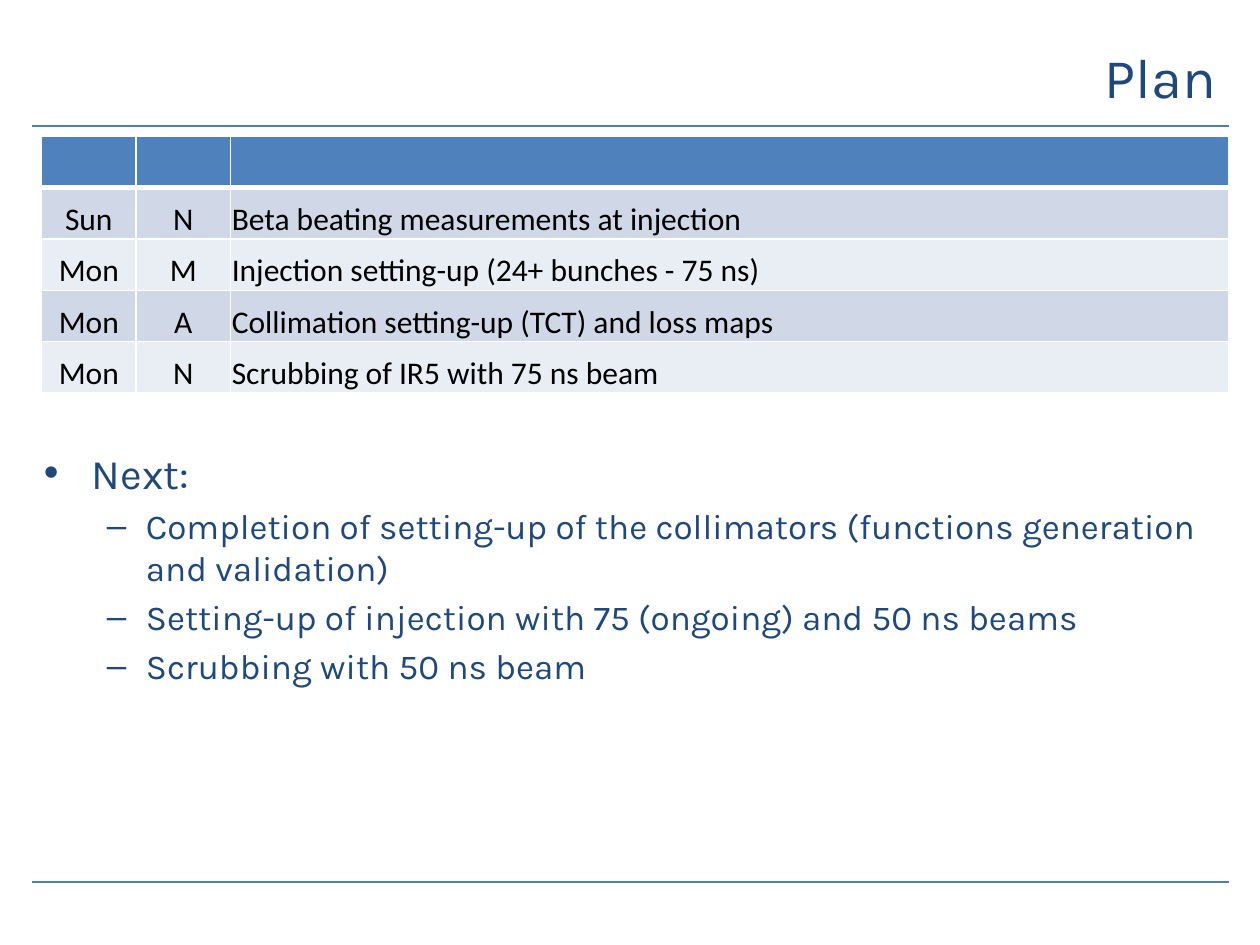
from lxml.etree import SubElement as Sub
from pptx import Presentation
from pptx.dml.color import RGBColor as Rgb
from pptx.enum.shapes import MSO_CONNECTOR as Conn
from pptx.enum.text import MSO_ANCHOR as Anchor, PP_ALIGN as Align
from pptx.oxml.ns import qn
from pptx.util import Inches, Pt

HUES = {
    "text": "1F497D", "rule": "4B7EBC", "head": "4F81BD", "edge": "FFFFFF",
    "odd": "D0D8E8", "even": "E9EDF4", "cell": "000000",
}
WIDTHS = [0.75, 0.75, 7.92]
ROWS = [
    ["", "", ""],
    ["Sun", "N", "Beta beating measurements at injection"],
    ["Mon", "M", "Injection setting-up (24+ bunches - 75 ns)"],
    ["Mon", "A", "Collimation setting-up (TCT) and loss maps"],
    ["Mon", "N", "Scrubbing of IR5 with 75 ns beam"],
]
# Bullet levels: mark, size, left margin, hanging indent
LEVELS = [("•", 24, 0.38, -0.38), ("–", 20, 0.81, -0.31)]
ITEMS = [
    (0, "Next:"),
    (1, "Completion of setting-up of the collimators "
        "(functions generation and validation)"),
    (1, "Setting-up of injection with 75 (ongoing) and 50 ns beams"),
    (1, "Scrubbing with 50 ns beam"),
]


def hue(key):
    return Rgb.from_string(HUES[key])


def put(obj, **vals):
    for name, val in vals.items():
        setattr(obj, name, val)


def write(para, text, size, font="Karla", key="text"):
    run = para.add_run()
    put(run, text=text)
    put(run.font, size=Pt(size), name=font)
    run.font.color.rgb = hue(key)


def add_rule(slide, y):
    line = slide.shapes.add_connector(
        Conn.STRAIGHT, Inches(0.25), Inches(y), Inches(9.75), Inches(y))
    line.line.color.rgb = hue("rule")
    line.line.width = Pt(1.5)
    Sub(line._element.spPr, qn("a:effectLst"))


def add_box(slide, x, y, w, h, **vals):
    box = slide.shapes.add_textbox(Inches(x), Inches(y), Inches(w), Inches(h))
    put(box.text_frame, word_wrap=True, **vals)
    return box.text_frame


def add_title(slide, text):
    frame = add_box(slide, 1.75, 0.17, 8, 0.87, vertical_anchor=Anchor.MIDDLE)
    para = frame.paragraphs[0]
    put(para, alignment=Align.RIGHT)
    write(para, text, 32)


def add_list(slide, items):
    frame = add_box(slide, 0.25, 3.5, 9.5, 3.33)
    for i, (level, text) in enumerate(items):
        para = frame.add_paragraph() if i else frame.paragraphs[0]
        mark, size, left, hang = LEVELS[level]
        props = para._p.get_or_add_pPr()
        props.set("marL", str(Inches(left)))
        props.set("indent", str(Inches(hang)))
        Sub(props, qn("a:buFont"), typeface="Arial")
        Sub(props, qn("a:buChar"), char=mark)
        put(para, level=level, space_before=Pt(4 if i else 0))
        write(para, text, size)


def set_edges(cell, base):
    props = cell._tc.get_or_add_tcPr()
    for side, width in dict(L=1, R=1, T=1, B=base).items():
        line = Sub(props, qn(f"a:ln{side}"), w=str(Pt(width)))
        fill = Sub(line, qn("a:solidFill"))
        Sub(fill, qn("a:srgbClr"), val=HUES["edge"])


def fill_cell(cell, text, row, col):
    set_edges(cell, 1 if row else 3)
    cell.fill.solid()
    band = "odd" if row % 2 else "even"
    cell.fill.fore_color.rgb = hue(band if row else "head")
    if text:
        edge = Inches(0.01)
        put(cell, vertical_anchor=Anchor.BOTTOM, margin_left=edge,
            margin_right=edge, margin_top=edge, margin_bottom=0)
        para = cell.text_frame.paragraphs[0]
        put(para, alignment=Align.CENTER if col < 2 else Align.LEFT)
        write(para, text, 18, "Calibri", "cell")


def add_plan(slide):
    table = slide.shapes.add_table(
        len(ROWS), len(WIDTHS), Inches(0.33), Inches(1.08),
        Inches(sum(WIDTHS)), Inches(2.04)).table
    for col, width in zip(table.columns, WIDTHS):
        put(col, width=Inches(width))
    for row, texts in enumerate(ROWS):
        for col, text in enumerate(texts):
            fill_cell(table.cell(row, col), text, row, col)


def main():
    deck = Presentation()
    put(deck, slide_width=Inches(10), slide_height=Inches(7.5))
    slide = deck.slides.add_slide(deck.slide_layouts[6])
    # Rules at head and foot
    for y in (1, 7):
        add_rule(slide, y)
    # Next steps, title and shift plan
    add_list(slide, ITEMS)
    add_title(slide, "Plan")
    add_plan(slide)
    deck.save("out.pptx")


if __name__ == "__main__":
    main()
